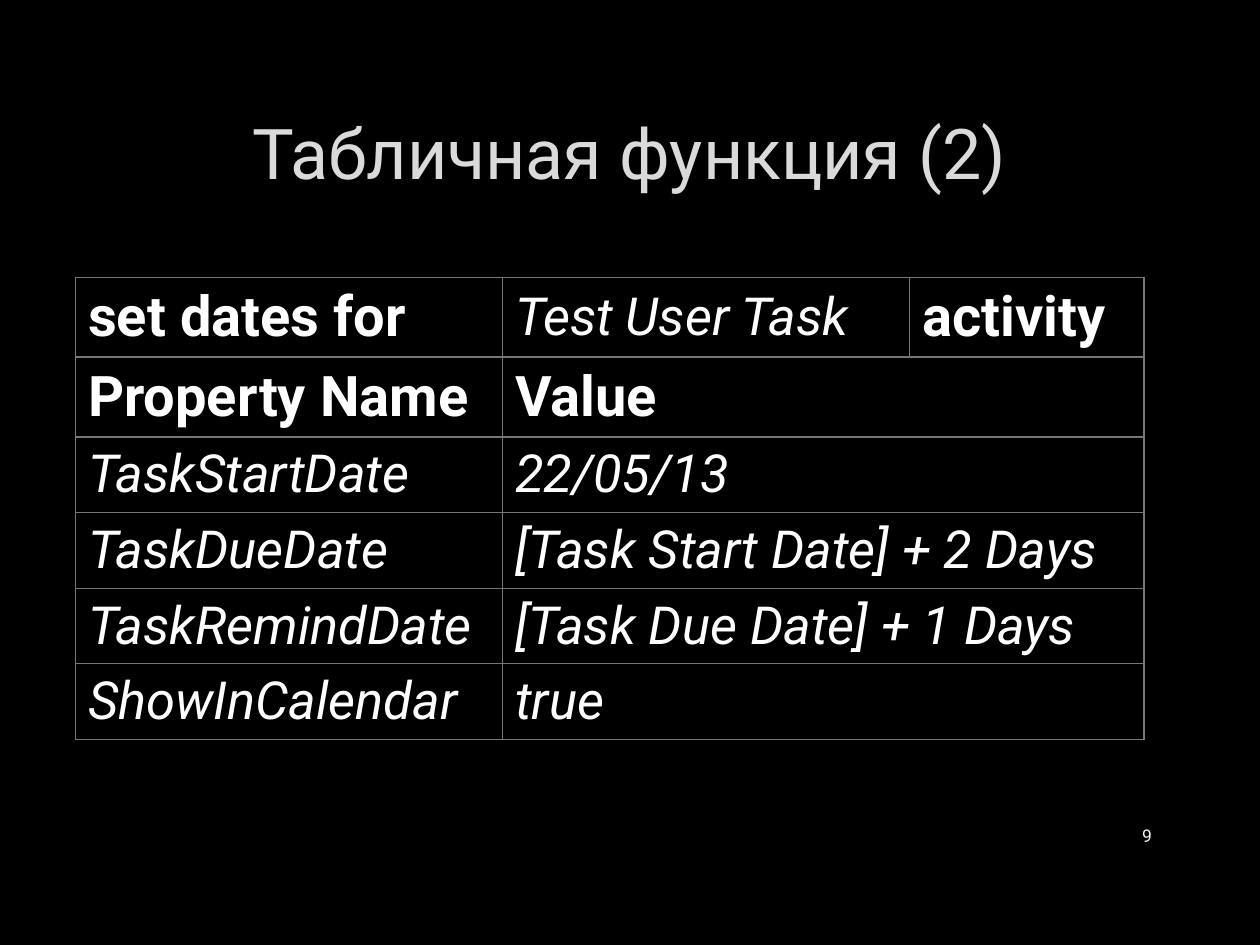
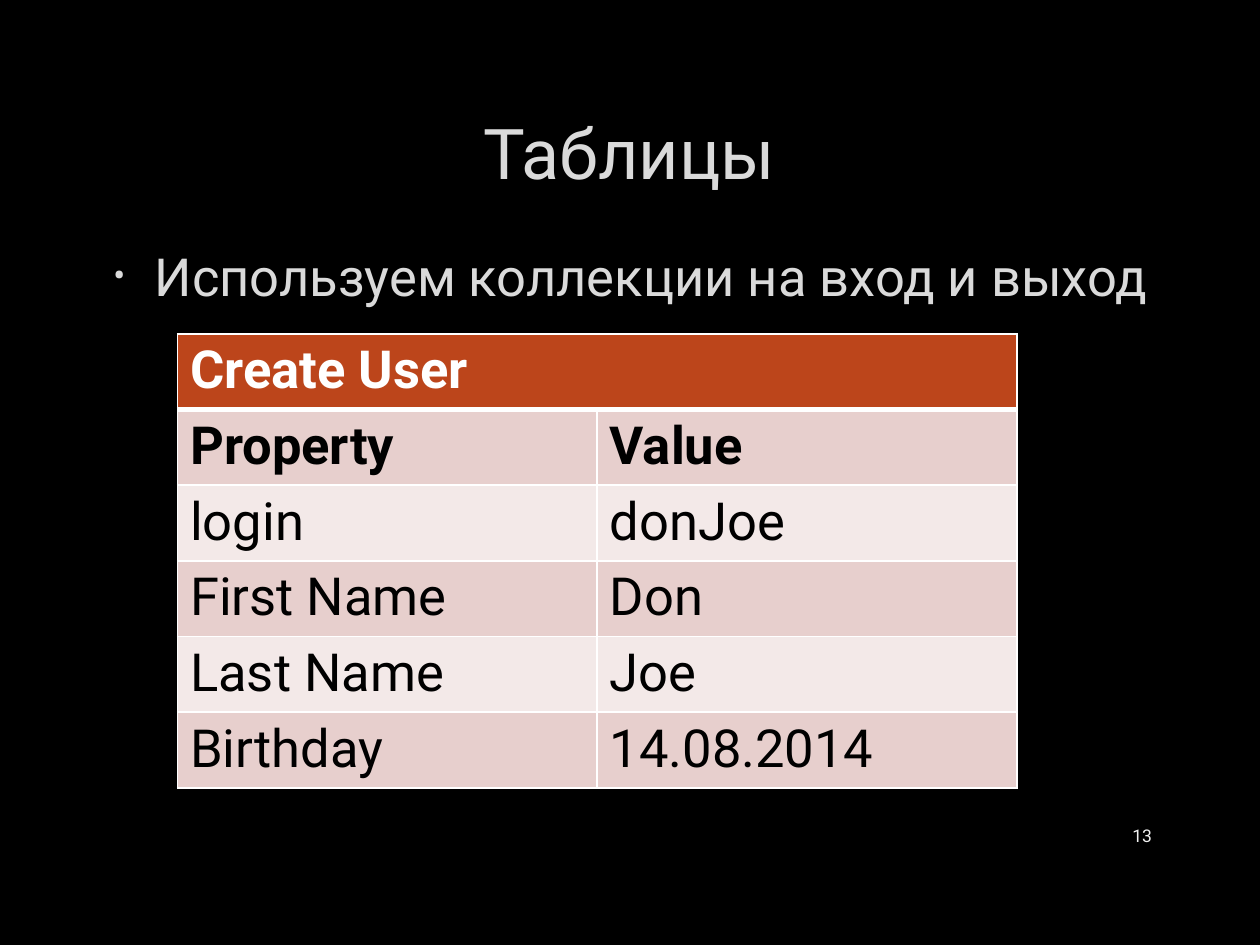
from dataclasses import dataclass

from lxml import etree
from pptx import Presentation
from pptx import util as u
from pptx.dml.color import RGBColor
from pptx.enum import text
from pptx.oxml import ns


@dataclass(frozen=True)
class Theme:
    font: str = "Roboto"
    background: str = "000000"
    heading: str = "DADADA"
    number: str = "F2F2F2"
    light: str = "FFFFFF"
    dark: str = "000000"
    grid: str = "777777"
    header: str = "BC451B"
    bands: tuple = ("E7CFCD", "F3E9E8")
    title_size: int = 40
    label_size: int = 32
    body_size: int = 30
    number_size: int = 10


class Deck:
    TITLE_ONLY = 5

    def __init__(self, theme):
        self.theme = theme
        self.deck = Presentation()
        self.deck.slide_width = u.Inches(10)
        self.deck.slide_height = u.Inches(7.5)
        self.page = None

    def apply(self, target, values):
        for name, value in values.items():
            setattr(target, name, value)

    def add_text(self, frame, words, size, color, align=text.PP_ALIGN.LEFT, **style):
        para = frame.paragraphs[0]
        para.alignment = align
        span = para.add_run()
        span.text = words
        self.apply(span.font, {"name": self.theme.font, "size": u.Pt(size), **style})
        span.font.color.rgb = RGBColor.from_string(color)
        return para

    def add_page(self, title, number):
        theme = self.theme
        self.page = self.deck.slides.add_slide(self.deck.slide_layouts[self.TITLE_ONLY])
        fill = self.page.background.fill
        fill.solid()
        fill.fore_color.rgb = RGBColor.from_string(theme.background)

        box = self.page.shapes.title
        place = {"left": 0.75, "top": 0.67, "width": 8.49, "height": 1.06}
        self.apply(box, {name: u.Inches(value) for name, value in place.items()})
        box.text_frame.vertical_anchor = text.MSO_ANCHOR.MIDDLE
        self.add_text(box.text_frame, title, theme.title_size, theme.heading, text.PP_ALIGN.CENTER)

        frame = self.add_box(8.62, 6.43, 0.62, 0.4)
        frame.vertical_anchor = text.MSO_ANCHOR.MIDDLE
        self.add_text(frame, str(number), theme.number_size, theme.number, text.PP_ALIGN.RIGHT)

    def add_box(self, left, top, width, height):
        box = self.page.shapes.add_textbox(*map(u.Inches, (left, top, width, height)))
        box.text_frame.word_wrap = True
        return box.text_frame

    def add_bullet(self, words):
        theme = self.theme
        frame = self.add_box(0.75, 1.89, 8.49, 4.44)
        para = self.add_text(frame, words, theme.body_size, theme.heading)
        self.apply(para, {"space_before": u.Pt(6), "space_after": u.Pt(6)})
        props = para._p.get_or_add_pPr()
        props.set("marL", str(u.Inches(0.38)))
        props.set("indent", str(u.Inches(-0.33)))
        color = etree.SubElement(props, ns.qn("a:buClr"))
        etree.SubElement(color, ns.qn("a:srgbClr"), val=theme.heading)
        etree.SubElement(props, ns.qn("a:buSzPct"), val="70000")
        etree.SubElement(props, ns.qn("a:buFont"), typeface=theme.font)
        etree.SubElement(props, ns.qn("a:buChar"), char="•")

    def add_table(self, left, top, widths, heights):
        lengths = (left, top, sum(widths), sum(heights))
        frame = self.page.shapes.add_table(len(heights), len(widths), *map(u.Inches, lengths))
        table = frame.table
        self.apply(table, {"first_row": False, "horz_banding": False})
        for column, width in zip(table.columns, widths):
            column.width = u.Inches(width)
        for row, height in zip(table.rows, heights):
            row.height = u.Inches(height)
        return table

    def style_cell(self, cell, fill, line, top=1, bottom=1, side=1):
        if fill:
            cell.fill.solid()
            cell.fill.fore_color.rgb = RGBColor.from_string(fill)
        else:
            cell.fill.background()
        props = cell._tc.get_or_add_tcPr()
        borders = {"lnL": side, "lnR": side, "lnT": top, "lnB": bottom}
        for place, (tag, weight) in enumerate(borders.items()):
            border = etree.Element(ns.qn(f"a:{tag}"), w=str(u.Pt(weight)))
            solid = etree.SubElement(border, ns.qn("a:solidFill"))
            etree.SubElement(solid, ns.qn("a:srgbClr"), val=line)
            props.insert(place, border)

    def add_task_table(self, rows):
        theme = self.theme
        label = {"size": theme.label_size, "bold": True}
        value = {"size": theme.body_size, "italic": True}
        heights = [0.62] * 2 + [0.58] * (len(rows) - 2)
        table = self.add_table(0.6, 2.2, (3.39, 3.23, 1.86), heights)
        for cell in table.iter_cells():
            self.style_cell(cell, None, theme.grid, 0.75, 0.75, 0.75)
        for r, row in enumerate(rows):
            if len(row) == 2:
                table.cell(r, 1).merge(table.cell(r, 2))
            for c, words in enumerate(row):
                cell = table.cell(r, c)
                cell.vertical_anchor = text.MSO_ANCHOR.MIDDLE
                is_label = r == 1 or (r == 0 and c != 1)
                style = label if is_label else value
                self.add_text(cell.text_frame, words, color=theme.light, **style)

    def add_user_table(self, header, rows):
        theme = self.theme
        table = self.add_table(1.41, 2.65, (3.33, 3.33), [0.58] * (len(rows) + 1))
        table.cell(0, 0).merge(table.cell(0, 1))
        for c in range(2):
            self.style_cell(table.cell(0, c), theme.header, theme.light, bottom=3)
        self.add_text(table.cell(0, 0).text_frame, header, theme.body_size, theme.light, bold=True)
        for r, row in enumerate(rows):
            for c, words in enumerate(row):
                cell = table.cell(r + 1, c)
                self.style_cell(cell, theme.bands[r % 2], theme.light, top=1 if r else 3)
                self.add_text(cell.text_frame, words, theme.body_size, theme.dark, bold=r == 0)


def main():
    show = Deck(Theme())

    show.add_page("Табличная функция (2)", 9)
    show.add_task_table([
        ("set dates for", "Test User Task", "activity"),
        ("Property Name", "Value"),
        ("TaskStartDate", "22/05/13"),
        ("TaskDueDate", "[Task Start Date] + 2 Days"),
        ("TaskRemindDate", "[Task Due Date] + 1 Days"),
        ("ShowInCalendar", "true"),
    ])

    show.add_page("Таблицы", 13)
    show.add_bullet("Используем коллекции на вход и выход")
    show.add_user_table("Create User", [
        ("Property", "Value"),
        ("login", "donJoe"),
        ("First Name", "Don"),
        ("Last Name", "Joe"),
        ("Birthday", "14.08.2014"),
    ])

    show.deck.save("out.pptx")


if __name__ == "__main__":
    main()
